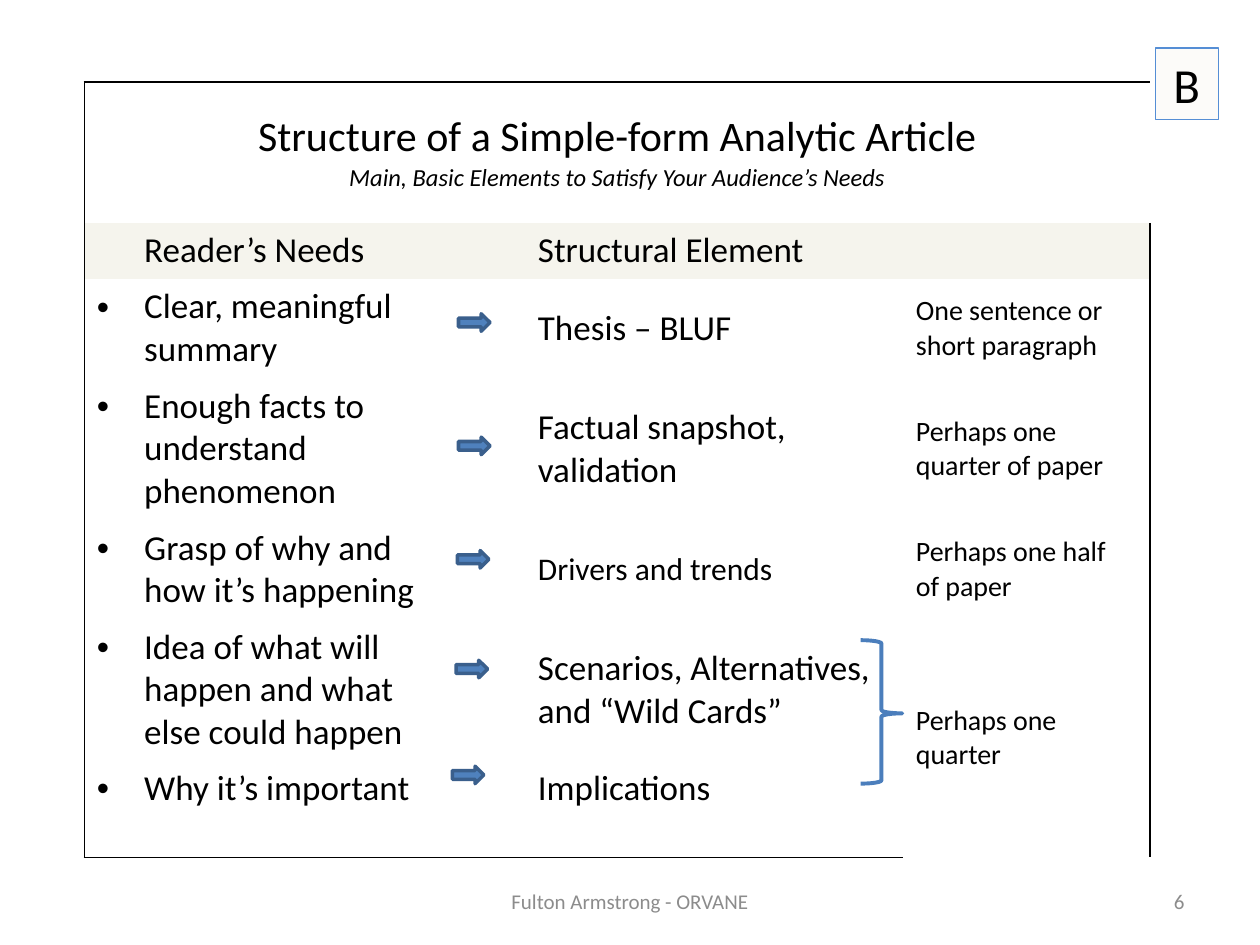
"""Build the slide that maps reader needs to the parts of an analytic article."""
from dataclasses import dataclass

from lxml.etree import SubElement as Sub
from pptx import Presentation
from pptx.dml.color import RGBColor as Rgb
from pptx.enum.shapes import MSO_SHAPE as Kind
from pptx.enum.text import MSO_ANCHOR as Anchor, PP_ALIGN as Align
from pptx.oxml.ns import qn
from pptx.util import Pt


@dataclass(frozen=True)
class Theme:
    font: str = "Calibri"
    ink: str = "000000"
    gray: str = "8C8C8C"
    band: str = "F5F4ED"
    blue: str = "4F81BD"
    edge: str = "3A5F8C"
    brace: str = "4B7EBC"
    paper: str = "FCFBF9"
    rim: str = "558ED5"
    head: int = 24
    sub: int = 14
    main: int = 20
    mid: int = 18
    note: int = 16
    foot: int = 12
    mark: int = 28


class Deck:
    def __init__(self, theme):
        self.theme = theme
        self.prs = Presentation()
        self.prs.slide_width, self.prs.slide_height = Pt(720), Pt(540)
        self.slide = self.prs.slides.add_slide(self.prs.slide_layouts[6])

    def text(self, para, words, size, color=None, slant=False, align=Align.LEFT):
        para.alignment = align
        for i, line in enumerate(words.split("\n")):
            if i:
                para.add_line_break()
            run = para.add_run()
            run.text = line
            font = run.font
            font.name, font.size = self.theme.font, Pt(size)
            font.bold, font.italic = False, slant
            font.color.rgb = Rgb.from_string(color or self.theme.ink)

    def indent(self, para, bullet=True):
        props = para._p.get_or_add_pPr()
        props.set("marL", str(Pt(27)))
        props.set("indent", str(Pt(-27 if bullet else 0)))
        if bullet:
            Sub(props, qn("a:buFont")).set("typeface", "Arial")
            Sub(props, qn("a:buChar")).set("char", "•")

    def rule(self, cell, sides):
        props = cell._tc.get_or_add_tcPr()
        for side in "LRTB":
            line = Sub(props, qn(f"a:ln{side}"), w=str(Pt(1)))
            if side in sides:
                fill = Sub(line, qn("a:solidFill"))
                Sub(fill, qn("a:srgbClr")).set("val", self.theme.ink)
            else:
                Sub(line, qn("a:noFill"))

    def table(self, x, y, cols, rows):
        frame = self.slide.shapes.add_table(
            len(rows), len(cols), Pt(x), Pt(y), Pt(sum(cols)), Pt(sum(rows)))
        grid = frame.table
        grid.first_row = grid.horz_banding = False
        for col, width in zip(grid.columns, cols):
            col.width = Pt(width)
        for row, height in zip(grid.rows, rows):
            row.height = Pt(height)
        for r in range(len(rows)):
            for c in range(len(cols)):
                cell = grid.cell(r, c)
                ends = {"L": c == 0, "R": c == len(cols) - 1,
                        "T": r == 0, "B": r == len(rows) - 1}
                self.rule(cell, [side for side, on in ends.items() if on])
                cell.vertical_anchor = Anchor.MIDDLE
                if r == 1:
                    cell.fill.solid()
                    cell.fill.fore_color.rgb = Rgb.from_string(self.theme.band)
                else:
                    cell.fill.background()
        return grid

    def shape(self, kind, x, y, w, h, line, weight, fill=None):
        item = self.slide.shapes.add_shape(kind, Pt(x), Pt(y), Pt(w), Pt(h))
        item.shadow.inherit = False
        item.line.color.rgb = Rgb.from_string(line)
        item.line.width = Pt(weight)
        if fill:
            item.fill.solid()
            item.fill.fore_color.rgb = Rgb.from_string(fill)
        else:
            item.fill.background()
        return item

    def label(self, x, y, w, h, words, align):
        frame = self.slide.shapes.add_textbox(Pt(x), Pt(y), Pt(w), Pt(h)).text_frame
        frame.word_wrap = True
        frame.vertical_anchor = Anchor.MIDDLE
        self.text(frame.paragraphs[0], words, self.theme.foot, self.theme.gray, align=align)


def main():
    look = Theme()
    deck = Deck(look)
    grid = deck.table(48.2, 46.8, [198, 54, 216, 141.1],
                      [80.6, 32, 56.6, 81.2, 56.6, 81.2, 55])

    grid.cell(0, 0).merge(grid.cell(0, 3))
    top = grid.cell(0, 0).text_frame
    deck.text(top.paragraphs[0], "Structure of a Simple-form Analytic Article",
              look.head, align=Align.CENTER)
    deck.text(top.add_paragraph(), "Main, Basic Elements to Satisfy Your Audience’s Needs",
              look.sub, slant=True, align=Align.CENTER)

    grid.cell(5, 3).merge(grid.cell(6, 3))
    body = [
        ("Reader’s Needs", "Structural Element", ""),
        ("Clear, meaningful summary", "Thesis – BLUF", "One sentence or short paragraph"),
        ("Enough facts to understand phenomenon", "Factual snapshot, validation",
         "Perhaps one quarter of paper"),
        ("Grasp of why and how it’s happening", "Drivers and trends",
         "Perhaps one half\nof paper"),
        ("Idea of what will happen and what else could happen",
         "Scenarios, Alternatives, and “Wild Cards”", "Perhaps one quarter"),
        ("Why it’s important", "Implications", ""),
    ]
    for r, (need, part, note) in enumerate(body, 1):
        sizes = look.main, look.mid if r == 4 else look.main, look.note
        for c, words, size in zip((0, 2, 3), (need, part, note), sizes):
            if words:
                para = grid.cell(r, c).text_frame.paragraphs[0]
                deck.text(para, words, size)
                if c == 0:
                    deck.indent(para, bullet=r > 1)
    for c in (0, 2):
        grid.cell(6, c).vertical_anchor = Anchor.TOP

    for x, y in [(262, 179.3), (262, 249.8), (261.4, 314.6), (260.6, 377.3), (258.5, 437.8)]:
        deck.shape(Kind.RIGHT_ARROW, x, y, 18, 10, look.edge, 2, look.blue)

    brace = deck.shape(Kind.RIGHT_BRACE, 491.8, 365.8, 23.8, 82, look.brace, 2.25)
    brace.adjustments[0], brace.adjustments[1] = 0.08, 0.51

    mark = deck.shape(Kind.RECTANGLE, 660.2, 27.4, 36, 41, look.rim, 0.75, look.paper)
    deck.text(mark.text_frame.paragraphs[0], "B", look.mark, align=Align.CENTER)

    deck.label(246, 500.4, 228, 28.8, "Fulton Armstrong - ORVANE", Align.CENTER)
    deck.label(516, 500.4, 168, 28.8, "6", Align.RIGHT)
    deck.prs.save("out.pptx")


if __name__ == "__main__":
    main()
